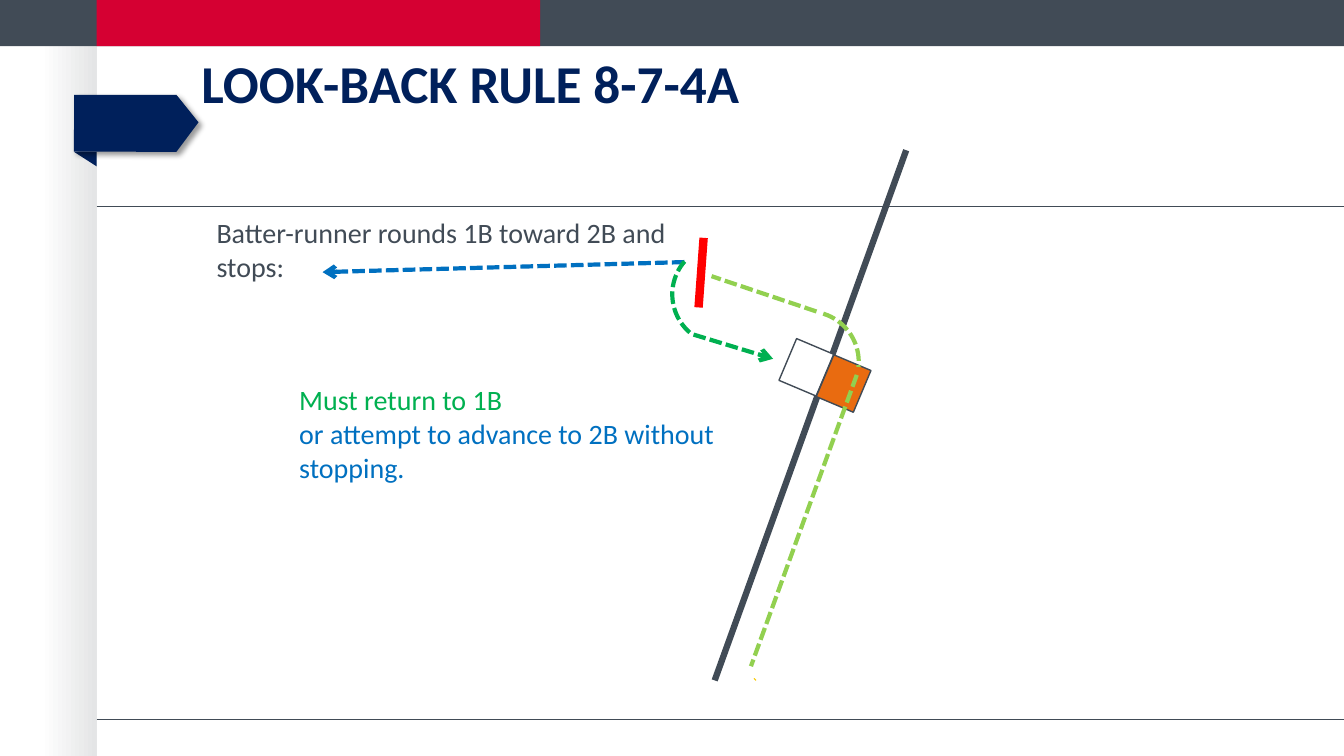
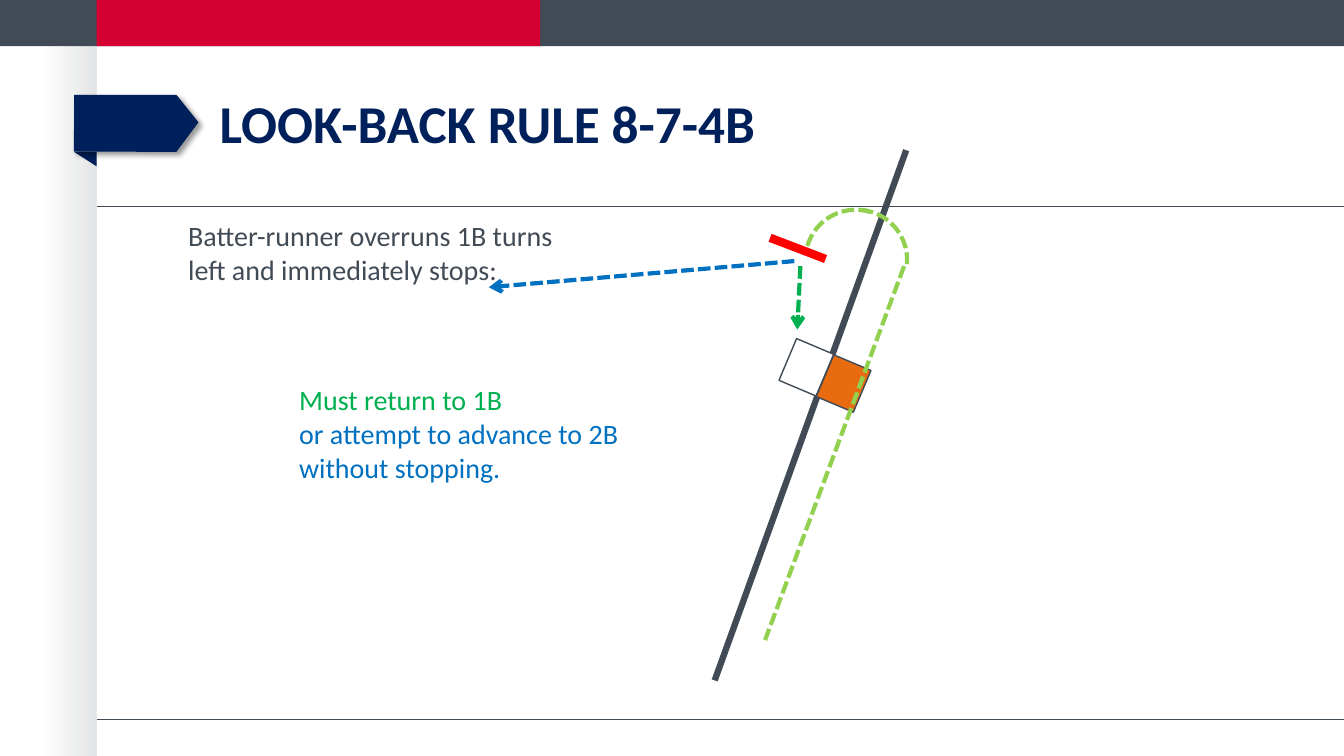
"""Build two softball look-back rule slides with base-running diagrams."""
from pptx import Presentation
from pptx.dml.color import RGBColor
from pptx.enum.dml import MSO_LINE
from pptx.enum.shapes import MSO_CONNECTOR, MSO_SHAPE
from pptx.enum.text import MSO_ANCHOR, MSO_AUTO_SIZE
from pptx.oxml import parse_xml
from pptx.oxml.ns import nsdecls
from pptx.oxml.xmlchemy import OxmlElement
from pptx.util import Pt

RECT, ARC = MSO_SHAPE.RECTANGLE, MSO_SHAPE.ARC
STRAIGHT = MSO_CONNECTOR.STRAIGHT
DASH = MSO_LINE.SQUARE_DOT
MIDDLE = MSO_ANCHOR.MIDDLE
GROW = MSO_AUTO_SIZE.SHAPE_TO_FIT_TEXT

FONT = "Calibri"
WIDTH, HEIGHT = 960, 540
MARGIN = 69
BAND = 33
COLORS = {
    "slate": "414B56", "crimson": "D50032", "navy": "00205B",
    "white": "FFFFFF", "silver": "E4E5E6", "orange": "E96B10",
    "red": "FF0000", "lime": "92D050", "green": "00B050",
    "blue": "0070C0", "yellow": "F9C900",
}
STYLES = {
    "foul line": ("slate", 4.5, False, False),
    "rule": ("slate", 1, False, False),
    "stop": ("red", 6, False, False),
    "mark": ("yellow", 0.75, False, False),
    "run": ("lime", 3, True, False),
    "turn": ("green", 3, True, False),
    "return": ("green", 3, True, True),
    "advance": ("blue", 3, True, True),
}
RIBBON_FOLD = [(53, 108.5), (MARGIN, 108.5), (MARGIN, 118.8)]
RIBBON = [(53, 67.7), (52.8, 108.3), (126, 108.5), (141.8, 87.4), (126, 67.7)]
FOUL_LINE = (510.5, 486, 647.3, 107.3)
BASES = [("white", 561.6, 246.2), ("orange", 588.2, 257.8)]
BASE_SIZE, BASE_TURN = (28.8, 32.4), 22.9
ARC_SIZE = 72
ARC_START = 162
CHOICES = [("Must return to 1B", "green"),
           ("or attempt to advance to 2B without stopping.", "blue")]

SLIDES = [
    {
        "title": ("LOOK-BACK RULE 8-7-4A", 136.8, 13.7),
        "play": ("Batter-runner rounds 1B toward 2B and stops:",
                 (147.6, 150.5, 350.6, 55.4)),
        "choices_width": 322.6,
        "lines": [
            ("stop", 502.6, 169.9, 499, 219.6),
            ("run", 612, 267.8, 536.4, 475.9),
            ("mark", 540, 486, 538.6, 484.6),
            ("run", 583.2, 222.5, 508.3, 197.3),
            ("return", 495.4, 239, 552.2, 256.3),
            ("advance", 488.9, 187.2, 230.4, 194.4),
        ],
        "arcs": [("run", 541.4, 222.5, 5.9, 168.79),
                 ("turn", 480.2, 174.2, 220.8, ARC_START)],
    },
    {
        "title": ("LOOK-BACK RULE 8-7-4B", 149.8, 42.5),
        "play": ("Batter-runner overruns 1B turns left and immediately stops:",
                 (127.4, 152.6, 285.8, 55.4)),
        "choices_width": 288,
        "lines": [
            ("stop", 550.1, 169.9, 589.7, 185),
            ("run", 645.8, 190.1, 546.5, 457.2),
            ("return", 571.7, 190.1, 569.5, 235.4),
            ("advance", 567.4, 186.5, 349.2, 205.2),
        ],
        "arcs": [("run", 575.3, 149.8, 286.4, ARC_START),
                 ("run", 576, 149.8, 4.6, ARC_START)],
    },
]


def color(name):
    return RGBColor.from_string(COLORS[name])


def points(values):
    return [Pt(value) for value in values]


def style_line(line, style):
    name, width, dashed, _ = STYLES[style]
    line.color.rgb = color(name)
    line.width = Pt(width)
    if dashed:
        line.dash_style = DASH


def add_line(page, style, *ends):
    connector = page.shapes.add_connector(STRAIGHT, *points(ends))
    style_line(connector.line, style)
    if STYLES[style][3]:
        head = OxmlElement("a:tailEnd")
        head.set("type", "arrow")
        connector.line._get_or_add_ln().append(head)
    connector._element.spPr.append(OxmlElement("a:effectLst"))


def add_rect(page, fill, *frame):
    rect = page.shapes.add_shape(RECT, *points(frame))
    rect.shadow.inherit = False
    rect.fill.solid()
    rect.fill.fore_color.rgb = color(fill)
    rect.line.fill.background()
    return rect


def add_arc(page, style, left, top, turn, start):
    arc = page.shapes.add_shape(ARC, *points((left, top, ARC_SIZE, ARC_SIZE)))
    arc.shadow.inherit = False
    arc.adjustments[0] = start
    arc.rotation = turn
    arc.fill.background()
    style_line(arc.line, style)


def add_outline(page, corners):
    start, *others = [points(corner) for corner in corners]
    builder = page.shapes.build_freeform(*start)
    builder.add_line_segments(others, close=True)
    outline = builder.convert_to_shape()
    outline.shadow.inherit = False
    outline.fill.solid()
    outline.fill.fore_color.rgb = color("navy")
    outline.line.fill.background()
    return outline


def add_text(page, frame, lines, size=20, bold=False):
    box = page.shapes.add_textbox(*points(frame))
    text_frame = box.text_frame
    text_frame.word_wrap = True
    text_frame.text = "\n".join(text for text, _ in lines)
    for para, (_, name) in zip(text_frame.paragraphs, lines):
        para.font.name = FONT
        para.font.size = Pt(size)
        para.font.bold = bold
        para.font.color.rgb = color(name)
    return text_frame


def add_frame(page):
    shade = add_rect(page, "silver", 28.8, BAND, MARGIN - 28.8, HEIGHT - BAND)
    shade.fill.gradient()
    shade.fill.gradient_angle = 0
    for stop, name in zip(shade.fill.gradient_stops, ("white", "silver")):
        stop.color.rgb = color(name)
    add_rect(page, "slate", 0, 0, WIDTH, BAND)
    add_rect(page, "crimson", MARGIN, 0, 316.8, BAND)
    for height in (147.6, 514):
        add_line(page, "rule", MARGIN, height, WIDTH, height)
    add_outline(page, RIBBON_FOLD)
    ribbon = add_outline(page, RIBBON)
    ribbon._element.spPr.find("{*}effectLst").append(parse_xml(
        f'<a:outerShdw {nsdecls("a")} blurRad="{Pt(4)}" dist="{Pt(3)}" '
        'dir="2700000" rotWithShape="0"><a:srgbClr val="000000">'
        '<a:alpha val="40000"/></a:srgbClr></a:outerShdw>'))


def add_title(page, text, left, top):
    title = add_text(page, (left, top, 689.8, 97.9), [(text, "navy")], 38, True)
    title.vertical_anchor = MIDDLE
    title.paragraphs[0].line_spacing = Pt(38)


def add_field(page):
    add_line(page, "foul line", *FOUL_LINE)
    for fill, left, top in BASES:
        base = add_rect(page, fill, left, top, *BASE_SIZE)
        base.rotation = BASE_TURN
        style_line(base.line, "rule")


def add_slide(deck, content):
    page = deck.slides.add_slide(deck.slide_layouts[6])
    add_frame(page)
    add_title(page, *content["title"])
    add_field(page)
    play, frame = content["play"]
    choices_frame = (206.6, 270, content["choices_width"], 79.9)
    for place, lines in ((choices_frame, CHOICES), (frame, [(play, "slate")])):
        add_text(page, place, lines).auto_size = GROW
    for line in content["lines"]:
        add_line(page, *line)
    for arc in content["arcs"]:
        add_arc(page, *arc)


def main():
    deck = Presentation()
    deck.slide_width, deck.slide_height = points((WIDTH, HEIGHT))
    for content in SLIDES:
        add_slide(deck, content)
    deck.save("out.pptx")


if __name__ == "__main__":
    main()
